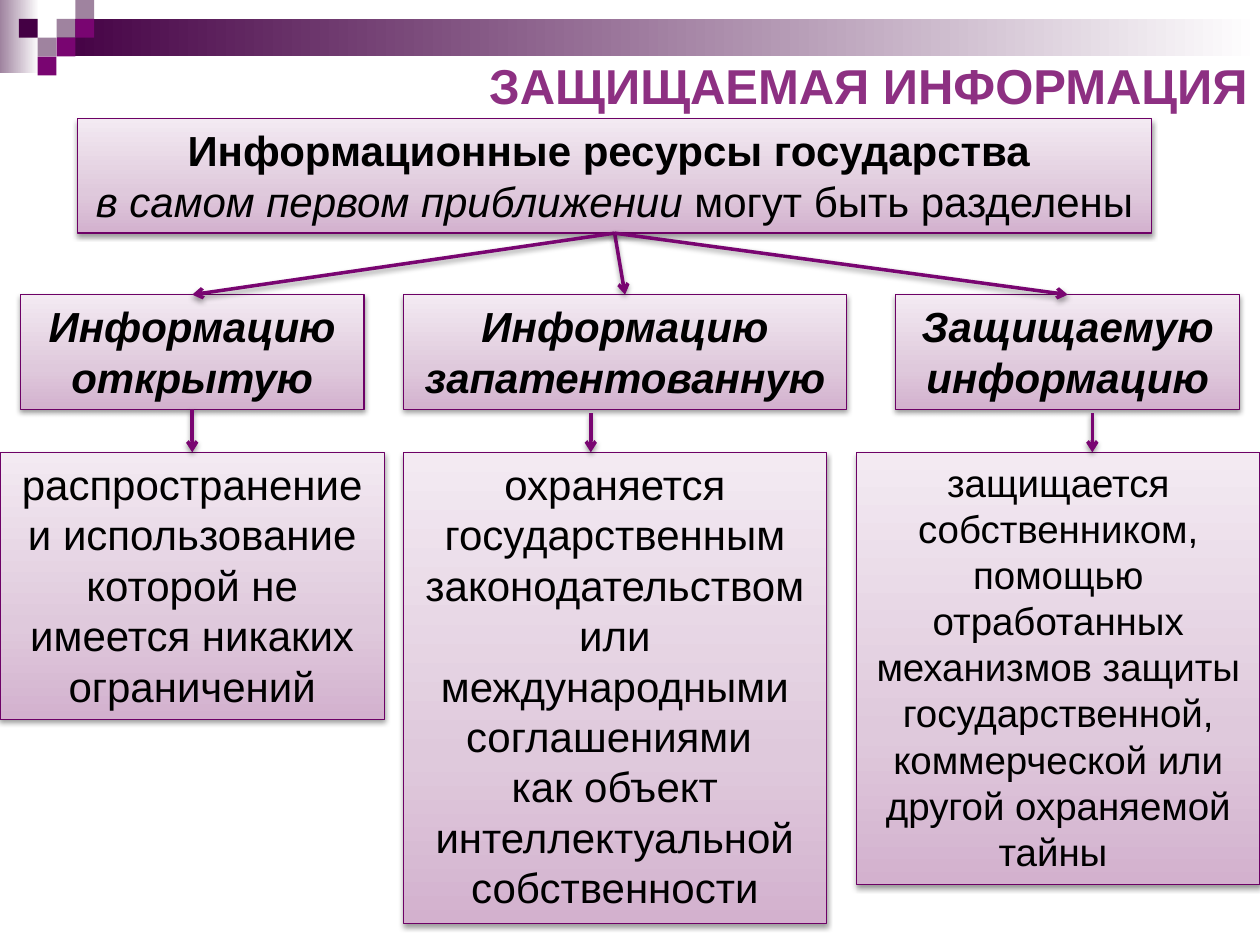
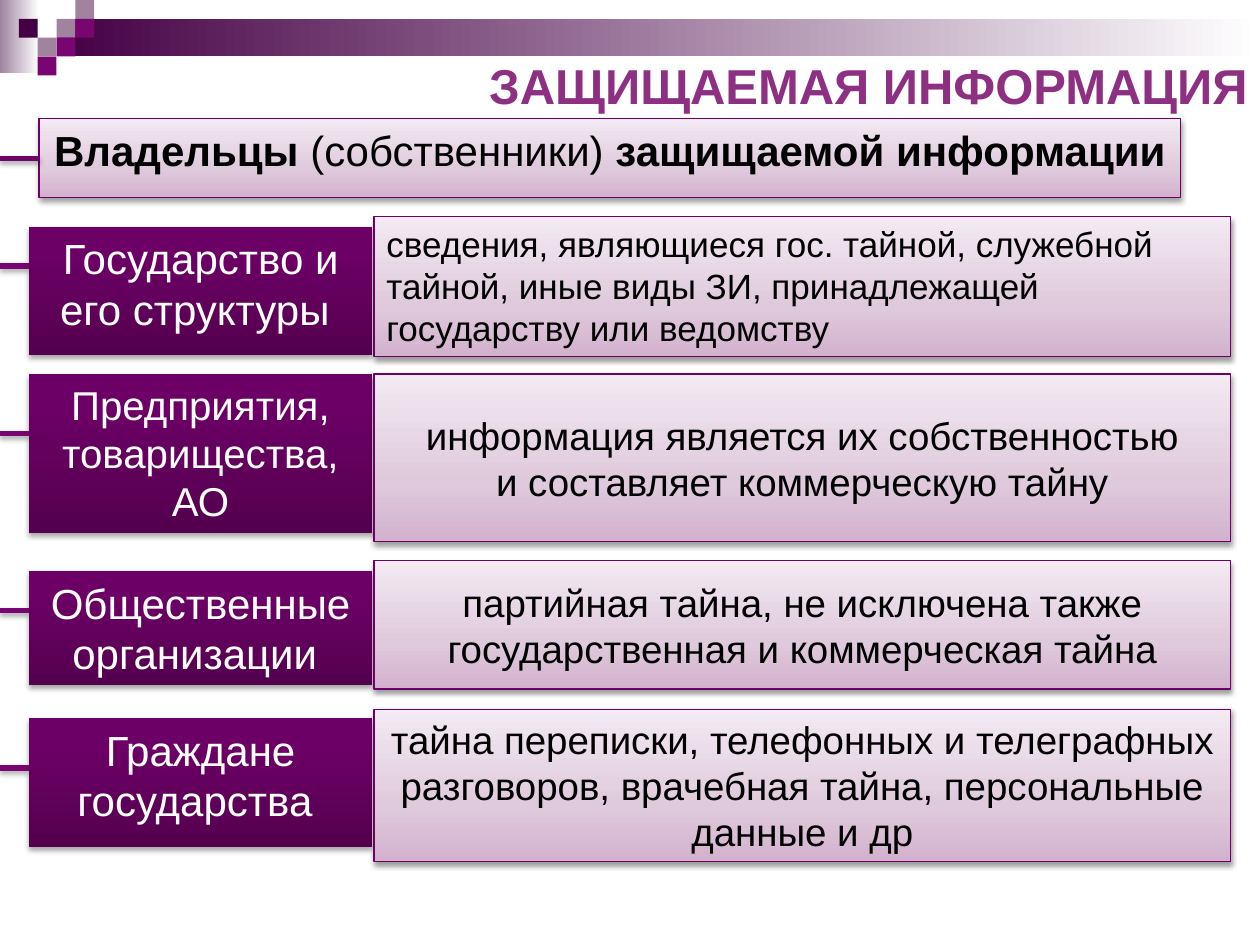
from pptx import Presentation
from pptx.dml.color import RGBColor
from pptx.enum.shapes import MSO_CONNECTOR, MSO_SHAPE
from pptx.enum.text import MSO_ANCHOR, MSO_AUTO_SIZE, PP_ALIGN
from pptx.oxml import parse_xml
from pptx.oxml.ns import nsdecls, qn
from pptx.util import Cm, Pt

FONT = "Arial"
COLORS = {
    "title": "8D3082", "dark": "440044", "mid": "790571", "light": "9F839F",
    "border": "6D0166", "head_line": "6D0466", "black": "000000", "white": "FFFFFF",
}
# Gradient name: (angle in degrees, [(position in percent, colour), ...])
GRADIENTS = {
    "corner": (0, [(0, "9F839F"), (100, "FFFFFF")]),
    "band": (0, [(0, "440044"), (100, "FFFFFF")]),
    "pale": (270, [(0, "D3B1CE"), (35, "DFC9DC"), (100, "F3EAF2")]),
    "deep": (270, [(0, "54004F"), (80, "6D0066"), (100, "6E0067")]),
}


def add_shadow(obj, alpha, dist):
    obj.element.spPr.append(parse_xml(
        f'<a:effectLst {nsdecls("a")}><a:outerShdw blurRad="{Pt(3.1)}" dist="{Pt(dist)}" '
        f'dir="5400000" rotWithShape="0"><a:srgbClr val="{COLORS["black"]}">'
        f'<a:alpha val="{alpha * 1000}"/></a:srgbClr></a:outerShdw></a:effectLst>'))


def box(s, x, y, w, h, fill, paras=(), size=24, align=PP_ALIGN.CENTER, anchor=MSO_ANCHOR.TOP):
    """Add a rectangle; each paragraph is a list of (text, style), style made of "b" and "i"."""
    sp = s.shapes.add_shape(MSO_SHAPE.RECTANGLE, Cm(x), Cm(y), Cm(w), Cm(h))
    if fill in GRADIENTS:
        angle, stops = GRADIENTS[fill]
        gs = "".join(f'<a:gs pos="{pos * 1000}"><a:srgbClr val="{c}"/></a:gs>' for pos, c in stops)
        sp.fill.gradient()
        spPr = sp.element.spPr
        spPr.replace(spPr.find(qn("a:gradFill")), parse_xml(
            f'<a:gradFill {nsdecls("a")} rotWithShape="1"><a:gsLst>{gs}</a:gsLst>'
            f'<a:lin ang="{angle * 60000}" scaled="0"/></a:gradFill>'))
    else:
        sp.fill.solid()
        sp.fill.fore_color.rgb = RGBColor.from_string(COLORS[fill])
    if fill == "pale":
        sp.line.color.rgb = RGBColor.from_string(COLORS["border"])
        sp.line.width = Pt(0.75)
        add_shadow(sp, 38, 1.6)
    else:
        sp.line.fill.background()
        if fill == "deep":
            add_shadow(sp, 35, 1.8)
        else:
            sp.shadow.inherit = False
    tf = sp.text_frame
    tf.word_wrap = True
    tf.vertical_anchor = anchor
    for i, parts in enumerate(paras):
        p = tf.add_paragraph() if i else tf.paragraphs[0]
        p.alignment = align
        for text, style in parts:
            if text == "\v":
                p.add_line_break()
                continue
            r = p.add_run()
            r.text = text
            r.font.name = FONT
            r.font.size = Pt(size)
            r.font.bold = "b" in style
            r.font.italic = "i" in style
            r.font.color.rgb = RGBColor.from_string(COLORS["white" if fill == "deep" else "black"])
    return sp


prs = Presentation()
prs.slide_width, prs.slide_height = Cm(25.4), Cm(19.05)
layout = prs.slide_layouts[5]
s1, s2 = [prs.slides.add_slide(layout) for _ in range(2)]

# Shared decoration, kept on the layout
TILE = 0.38
decor = [box(s1, 0, 0, 0.79, 1.47, "corner"), box(s1, 1.14, TILE, 24.26, 2 * TILE, "band")]
for col, row, color in [(3, 1, "light"), (4, 0, "light"), (4, 1, "mid"), (2, 2, "light"),
                        (1, 1, "dark"), (3, 2, "mid"), (2, 3, "mid")]:
    decor.append(box(s1, col * TILE, row * TILE, TILE, TILE, color))
for sp in decor:
    layout.shapes.element.append(sp.element)

# Shared title
for s in (s1, s2):
    title = s.shapes.title
    title.left, title.top, title.width, title.height = Cm(1.4), Cm(0.99), Cm(24), Cm(1.45)
    tf = title.text_frame
    tf.text = "ЗАЩИЩАЕМАЯ ИНФОРМАЦИЯ"
    tf.word_wrap = True
    tf.auto_size = MSO_AUTO_SIZE.NONE
    tf.vertical_anchor = MSO_ANCHOR.MIDDLE
    p = tf.paragraphs[0]
    p.alignment = PP_ALIGN.RIGHT
    font = p.runs[0].font
    font.name, font.size, font.bold = FONT, Pt(28), True
    font.color.rgb = RGBColor.from_string(COLORS["title"])

# Slide 1: kinds of information
KIND_Y, ROW_H, DETAIL_Y, ARROW_Y = 5.94, 2.31, 9.12, 8.33
root = box(s1, 1.57, 2.39, 21.64, ROW_H, "pale", [
    [("Информационные ресурсы государства ", "b")],
    [("в самом первом приближении", "i"), (" могут быть разделены", "")]])

# kind x, width, text; detail x, width, height, size, paragraphs; free arrow x
kinds = [
    (0.41, 6.93, "Информацию открытую", 0, 7.75, 5.38, 24,
     ["распространение и использование которой не имеется никаких ограничений"], None),
    (8.13, 8.94, "Информацию запатентованную", 8.13, 8.53, 9.5, 24,
     ["охраняется государственным законодательством или международными соглашениями ",
      "как объект интеллектуальной собственности"], 11.91),
    (18.06, 6.93, "Защищаемую информацию", 17.27, 8.13, 8.71, 22,
     ["защищается собственником, помощью отработанных механизмов защиты государственной, "
      "коммерческой или другой охраняемой тайны "], 22.02),
]
arrows = []
for x, w, text, dx, dw, dh, size, details, arrow_x in kinds:
    kind = box(s1, x, KIND_Y, w, ROW_H, "pale", [[(text, "bi")]])
    detail = box(s1, dx, DETAIL_Y, dw, dh, "pale", [[(t, "")] for t in details], size)
    branch = s1.shapes.add_connector(MSO_CONNECTOR.STRAIGHT, 0, 0, 0, 0)
    branch.begin_connect(root, 2)
    branch.end_connect(kind, 0)
    down = s1.shapes.add_connector(MSO_CONNECTOR.STRAIGHT, Cm(arrow_x or 0), Cm(ARROW_Y),
                                   Cm(arrow_x or 0), Cm(DETAIL_Y))
    if arrow_x is None:
        down.begin_connect(kind, 2)
        down.end_connect(detail, 0)
    arrows += [branch, down]
for c in arrows:
    c.line.color.rgb = RGBColor.from_string(COLORS["mid"])
    c.line.width = Pt(2)
    c.element.spPr.find(qn("a:ln")).append(
        parse_xml(f'<a:tailEnd {nsdecls("a")} type="arrow"/>'))
    add_shadow(c, 38, 1.6)

# Slide 2: owners of protected information
OWNER_X, OWNER_W, SECRET_X, SECRET_W = 0.58, 6.93, 7.54, 17.27
head = box(s2, 0.79, 2.39, 23.01, 1.6, "pale", [
    [("Владельцы", "b"), (" (собственники) ", ""), ("защищаемой информации", "b")]])
stub = s2.shapes.add_connector(MSO_CONNECTOR.STRAIGHT, 0, Cm(3.19), Cm(0.79), Cm(3.19))
stub.end_connect(head, 1)
stubs = [(stub, "head_line")]

# owner y, height, size, text; secret y, height, size, alignment, anchor, parts; stub y
owners = [
    (4.57, 2.59, 24, "Государство и его структуры ", 4.37, 2.82, 20, PP_ALIGN.LEFT, MSO_ANCHOR.TOP,
     ["сведения, являющиеся гос. тайной, служебной тайной, иные виды ЗИ, "
      "принадлежащей государству или ведомству"], 5.36),
    (7.54, 3.2, 23, "Предприятия, товарищества, АО", 7.54, 3.38, 22, PP_ALIGN.CENTER,
     MSO_ANCHOR.MIDDLE,
     ["информация является их собственностью", "\v", "и составляет коммерческую тайну"], 8.74),
    (11.51, 2.31, 24, "Общественные организации ", 11.3, 2.59, 22, PP_ALIGN.CENTER,
     MSO_ANCHOR.MIDDLE,
     ["партийная тайна, не исключена также государственная и коммерческая тайна"], 12.31),
    (14.48, 2.59, 24, "Граждане государства ", 14.3, 3.07, 22, PP_ALIGN.CENTER, MSO_ANCHOR.TOP,
     ["тайна переписки, телефонных и телеграфных разговоров, врачебная тайна, "
      "персональные данные и др"], 15.48),
]
for y, h, size, owner, sy, sh, ssize, align, anchor, parts, stub_y in owners:
    box(s2, OWNER_X, y, OWNER_W, h, "deep", [[(owner, "")]], size)
    box(s2, SECRET_X, sy, SECRET_W, sh, "pale", [[(t, "") for t in parts]], ssize, align, anchor)
    stub = s2.shapes.add_connector(MSO_CONNECTOR.STRAIGHT, Cm(OWNER_X), Cm(stub_y), 0, Cm(stub_y))
    stubs.append((stub, "mid"))
for c, color in stubs:
    c.line.color.rgb = RGBColor.from_string(COLORS[color])
    c.line.width = Pt(3)
    add_shadow(c, 35, 1.8)

prs.save("out.pptx")
